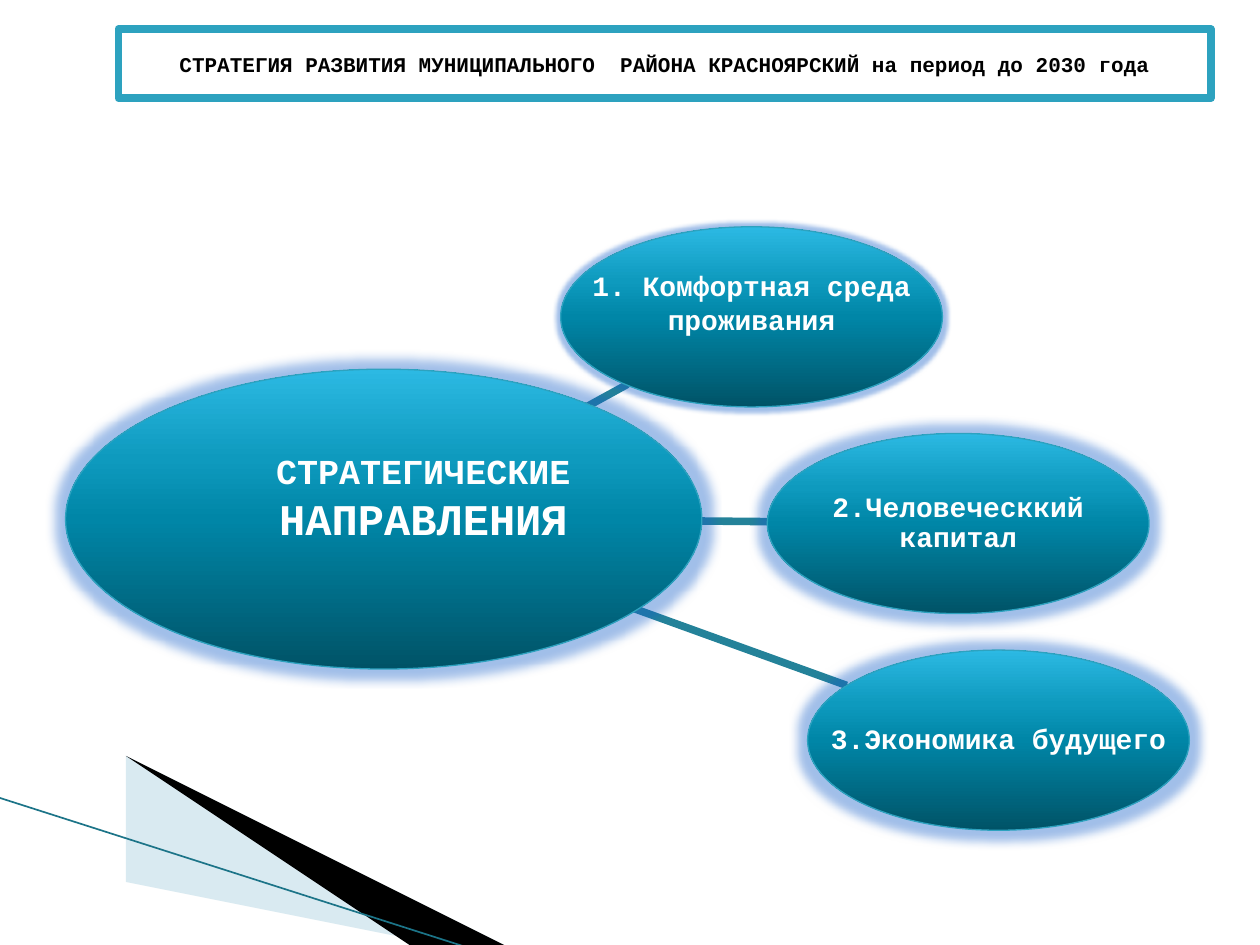
import pptx
import pptx.dml.color
import pptx.enum.dml
import pptx.enum.shapes
import pptx.enum.text
import pptx.oxml
import pptx.oxml.ns
import pptx.util
from lxml import etree

Inches = pptx.util.Inches
Pt = pptx.util.Pt
RGB = pptx.dml.color.RGBColor
SHAPES = pptx.enum.shapes.MSO_SHAPE
MIDDLE = pptx.enum.text.MSO_ANCHOR.MIDDLE
TOP = pptx.enum.text.MSO_ANCHOR.TOP
qn = pptx.oxml.ns.qn

WHITE = RGB(0xFF, 0xFF, 0xFF)
BLACK = RGB(0, 0, 0)
TEAL = RGB(0x2D, 0xA2, 0xBF)
SPOKE = RGB(0x24, 0x82, 0x99)
PALE = RGB(0xA0, 0xCB, 0xDC)
EDGE = RGB(0x1C, 0x74, 0x88)
GLOW = RGB(0x16, 0x5F, 0xC8)
GRADIENT = [
    (0, RGB(0x00, 0x53, 0x67)),
    (50, RGB(0x00, 0x86, 0xA7)),
    (70, RGB(0x0E, 0x9A, 0xBE)),
    (100, RGB(0x2C, 0xB9, 0xE3)),
]
FONT = "Courier New"
NODE_SIZE = (3.03, 1.43)
DIRECTIONS = [
    {"label": "1. Комфортная среда проживания", "at": (4.45, 1.8),
     "spoke": ((3.87, 3.66), (4.98, 3.05)), "glow": 5, "lift": 0.23, "spacing": 1},
    {"label": "2.Человеческкий капитал", "at": (6.09, 3.44),
     "spoke": ((3.87, 4.12), (6.09, 4.14)), "glow": 11, "lift": 0, "spacing": 0.9},
    {"label": "3.Экономика будущего", "at": (6.41, 5.16),
     "spoke": ((3.87, 4.41), (6.72, 5.44)), "glow": 11, "lift": 0, "spacing": 0.9},
]


def add_color(parent, color, opacity=None):
    """Append an RGB colour element, with an opacity in percent if given."""
    element = etree.SubElement(parent, qn("a:srgbClr"), val=str(color))
    if opacity is not None:
        etree.SubElement(element, qn("a:alpha"), val=str(opacity * 1000))


def add_line(slide, start, end, color, width):
    """Draw a straight line without a shadow."""
    line = slide.shapes.add_connector(
        pptx.enum.shapes.MSO_CONNECTOR.STRAIGHT,
        *(Inches(value) for value in (*start, *end)))
    line.line.color.rgb = color
    line.line.width = Pt(width)
    etree.SubElement(line._element.spPr, qn("a:effectLst"))


def add_wedge(slide, points, color, opacity):
    """Draw a filled wedge through the given points."""
    builder = slide.shapes.build_freeform(*points[0], scale=Inches(1))
    builder.add_line_segments(points[1:], close=True)
    wedge = builder.convert_to_shape()
    wedge.shadow.inherit = False
    wedge.fill.solid()
    wedge.fill.fore_color.rgb = color
    wedge.line.fill.background()
    solid = wedge._element.spPr.find(qn("a:solidFill"))
    solid.remove(solid[0])
    add_color(solid, color, opacity)


def add_corner(slide, left, top):
    """Draw the wedges and the edge line of the lower left corner."""
    pale = [(0, 0.01), (5.4, 1.01), (4.01, 1.01), (0, 0)]
    dark = [(-0.02, -0.01), (4.02, 1.01), (3.17, 1.01), (-0.01, 0)]
    for outline, color, opacity in ((pale, PALE, 40), (dark, BLACK, 100)):
        add_wedge(slide, [(left + x, top + y) for x, y in outline], color, opacity)
    add_line(slide, (left - 0.56, top - 0.17), (left + 3.16, top + 1.02), EDGE, 0.95)


def add_label(slide, box, runs, anchor=MIDDLE, inset=0.01, lift=0, spacing=1):
    """Place centred bold white text made of (text, size) runs."""
    frame = slide.shapes.add_textbox(*(Inches(value) for value in box)).text_frame
    frame.word_wrap = True
    frame.vertical_anchor = anchor
    frame.margin_left = frame.margin_right = frame.margin_top = Inches(inset)
    frame.margin_bottom = Inches(inset + lift)
    paragraph = frame.paragraphs[0]
    paragraph.alignment = pptx.enum.text.PP_ALIGN.CENTER
    paragraph.line_spacing = float(spacing)
    for text, size in runs:
        run = paragraph.add_run()
        run.text = text
        run.font.name = FONT
        run.font.size = Pt(size)
        run.font.bold = True
        run.font.color.rgb = WHITE


def add_ellipse(slide, box, glow):
    """Draw a glowing ellipse with the vertical gradient."""
    ellipse = slide.shapes.add_shape(SHAPES.OVAL, *(Inches(value) for value in box))
    ellipse.shadow.inherit = False
    ellipse.fill.gradient()
    ellipse.fill.gradient_angle = 90
    ellipse.line.color.rgb = TEAL
    ellipse.line.width = Pt(0.75)
    properties = ellipse._element.spPr
    stops = properties.find(qn("a:gradFill")).find(qn("a:gsLst"))
    for stop in list(stops):
        stops.remove(stop)
    for position, color in GRADIENT:
        add_color(etree.SubElement(stops, qn("a:gs"), pos=str(position * 1000)), color)
    effects = properties.find(qn("a:effectLst"))
    add_color(etree.SubElement(effects, qn("a:glow"), rad=str(Pt(glow))), GLOW, 40)


def add_title(slide, box):
    """Draw the framed title."""
    title = slide.shapes.add_shape(SHAPES.RECTANGLE, *(Inches(value) for value in box))
    title.shadow.inherit = False
    title.fill.solid()
    title.fill.fore_color.rgb = WHITE
    title.line.color.rgb = TEAL
    title.line.width = Pt(4.33)
    frame = title.text_frame
    frame.word_wrap = True
    frame.vertical_anchor = MIDDLE
    frame.text = ("СТРАТЕГИЯ РАЗВИТИЯ МУНИЦИПАЛЬНОГО  РАЙОНА КРАСНОЯРСКИЙ "
                  "на период до 2030 года")
    paragraph = frame.paragraphs[0]
    paragraph.alignment = pptx.enum.text.PP_ALIGN.CENTER
    font = paragraph.runs[0].font
    font.name = FONT
    font.size = Pt(12)
    font.bold = True
    font.color.rgb = BLACK


def add_directions(slide, box):
    """Draw the hub, its spokes and the directions around it."""
    left, top, width, height = box

    def shift(point):
        """Move a point from the region to the slide."""
        return left + point[0], top + point[1]

    for direction in reversed(DIRECTIONS):
        start, end = direction["spoke"]
        add_line(slide, shift(start), shift(end), SPOKE, 4.33)
    add_ellipse(slide, (*shift((0.52, 2.93)), 5.05, 2.38), 11)
    for direction in DIRECTIONS:
        node = (*shift(direction["at"]), *NODE_SIZE)
        add_ellipse(slide, node, direction["glow"])
        add_label(slide, node, [(direction["label"], 16)],
                  lift=direction["lift"], spacing=direction["spacing"])
    add_label(slide, (*shift((1.72, 3.52)), 3.28, 0.86),
              [("СТРАТЕГИЧЕСКИЕ ", 20), ("НАПРАВЛЕНИЯ", 25)], anchor=TOP, inset=0.05)


def main():
    """Build and save the slide."""
    deck = pptx.Presentation()
    deck.slide_width = Inches(10)
    deck.slide_height = Inches(7.5)
    slide = deck.slides.add_slide(deck.slide_layouts[6])
    add_corner(slide, 0.55, 6.5)
    add_title(slide, (0.94, 0.23, 8.67, 0.55))
    add_directions(slide, (0, 0, 10, 7.5))
    deck.save("out.pptx")


if __name__ == "__main__":
    main()
